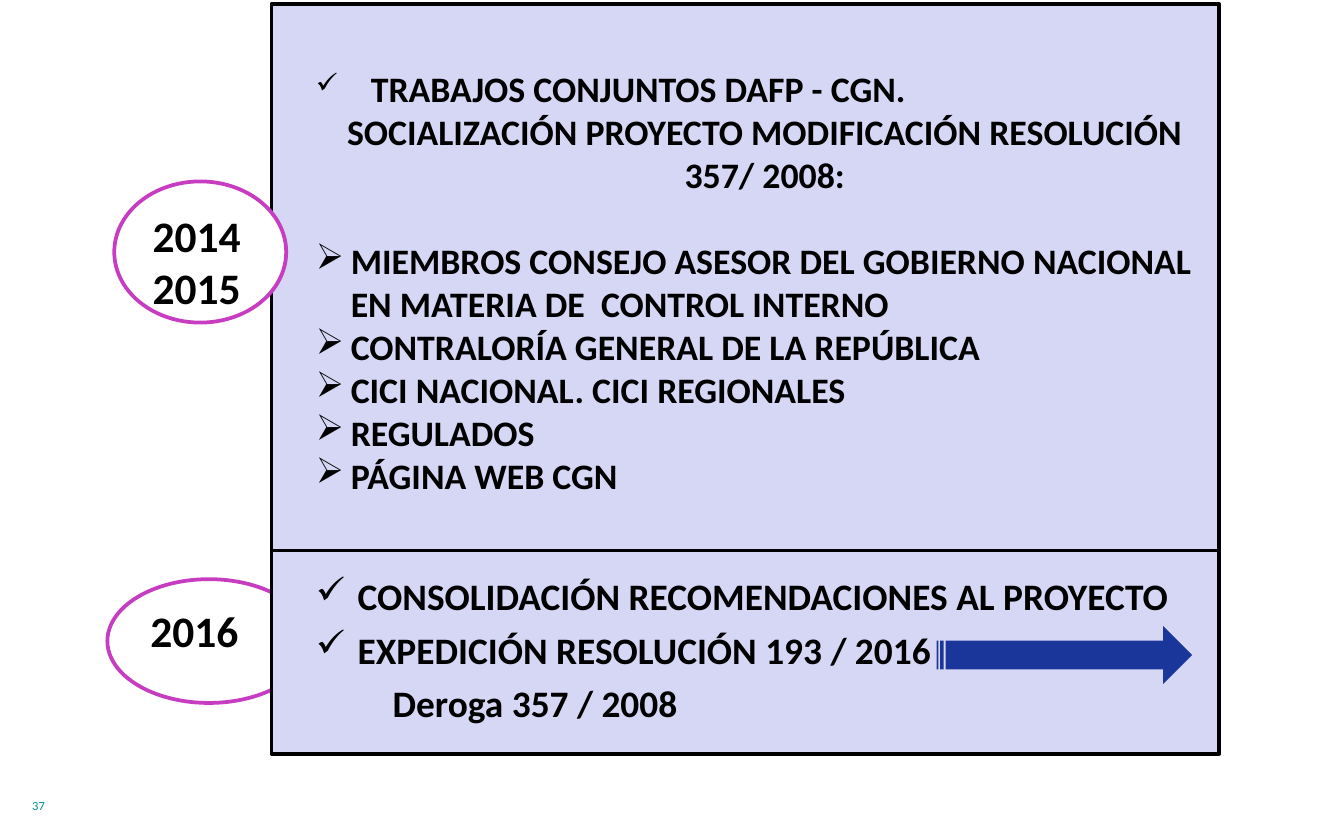
from dataclasses import dataclass

from lxml import etree
from pptx import Presentation
from pptx import util as u
from pptx.dml.color import RGBColor
from pptx.enum import shapes, text
from pptx.oxml.ns import qn

COLORS = {
    "panel": "D6D6F5",
    "ink": "000000",
    "white": "FFFFFF",
    "ring": "C73DC2",
    "arrow": "1B369A",
    "number": "00918E",
}
FONT = "Calibri"
CHECK, ARROWHEAD = "✓", "➢"


@dataclass
class Box:
    """Place and size in centimetres."""
    left: float
    top: float
    width: float
    height: float

    def lengths(self) -> list:
        return [u.Cm(v) for v in (self.left, self.top, self.width, self.height)]


@dataclass
class Line:
    """One paragraph: indents in centimetres, sizes and gaps in points."""
    words: str
    size: float
    bullet: str = ""
    margin: float = 0
    before: float = 0
    spacing: float = 1.0
    bullet_pct: int = 100
    align: text.PP_ALIGN = text.PP_ALIGN.LEFT
    bold: bool = True
    color: str = "ink"


@dataclass
class Block:
    kind: shapes.MSO_SHAPE
    box: Box
    fill: str
    outline: str
    lines: list
    frame: dict


def rgb(name: str) -> RGBColor:
    return RGBColor.from_string(COLORS[name])


def set_all(target, values: dict) -> None:
    for name, value in values.items():
        setattr(target, name, value)


def add_bullet(p, line: Line) -> None:
    p_pr = p._p.get_or_add_pPr()
    p_pr.set("marL", str(u.Cm(line.margin)))
    if line.bullet:
        p_pr.set("indent", str(-u.Cm(line.margin)))
        etree.SubElement(p_pr, qn("a:buSzPct"), val=str(line.bullet_pct * 1000))
        etree.SubElement(p_pr, qn("a:buChar"), char=line.bullet)


def write(tf, lines: list, frame: dict) -> None:
    set_all(tf, {"word_wrap": True, **frame})
    for i, line in enumerate(lines):
        p = tf.add_paragraph() if i else tf.paragraphs[0]
        add_bullet(p, line)
        set_all(p, {"alignment": line.align, "line_spacing": line.spacing,
                    "space_before": u.Pt(line.before)})
        r = p.add_run()
        r.text = line.words
        set_all(r.font, {"name": FONT, "size": u.Pt(line.size), "bold": line.bold})
        r.font.color.rgb = rgb(line.color)


def add_block(slide, block: Block) -> None:
    sp = slide.shapes.add_shape(block.kind, *block.box.lengths())
    sp.shadow.inherit = False
    sp.fill.solid()
    sp.fill.fore_color.rgb = rgb(block.fill)
    if block.outline:
        sp.line.color.rgb = rgb(block.outline)
        sp.line.width = u.Pt(2)
    else:
        sp.line.fill.background()
    if block.lines:
        write(sp.text_frame, block.lines, block.frame)


def panel(top: float, height: float, lines: list) -> Block:
    frame = {"vertical_anchor": text.MSO_ANCHOR.MIDDLE, "margin_left": u.Cm(0.84),
             **{f"margin_{side}": u.Cm(0.1) for side in ("top", "right", "bottom")}}
    return Block(shapes.MSO_SHAPE.RECTANGLE, Box(5.13, top, 17.91, height),
                 "panel", "ink", lines, frame)


def year_ring(box: Box, years: list) -> Block:
    return Block(shapes.MSO_SHAPE.OVAL, box, "white", "ring",
                 [Line(year, 23.3) for year in years],
                 {"vertical_anchor": text.MSO_ANCHOR.TOP})


def main() -> None:
    prs = Presentation()
    prs.slide_width, prs.slide_height = u.Cm(25.4), u.Cm(15.88)
    slide = prs.slides.add_slide(prs.slide_layouts[6])

    audiences = [
        "MIEMBROS CONSEJO ASESOR DEL GOBIERNO NACIONAL EN MATERIA DE  CONTROL INTERNO",
        "CONTRALORÍA GENERAL DE LA REPÚBLICA",
        "CICI NACIONAL. CICI REGIONALES",
        "REGULADOS",
        "PÁGINA WEB CGN",
    ]
    outreach = [
        Line("TRABAJOS CONJUNTOS DAFP - CGN.", 19.2, CHECK, 1.04, bullet_pct=78),
        Line("SOCIALIZACIÓN PROYECTO MODIFICACIÓN RESOLUCIÓN 357/ 2008:", 19.2,
             align=text.PP_ALIGN.CENTER),
        *(Line(words, 19.2, ARROWHEAD, 0.66, before=0 if i else 23.4)
          for i, words in enumerate(audiences)),
    ]
    resolution = [
        Line("CONSOLIDACIÓN RECOMENDACIONES AL PROYECTO", 20, CHECK, 0.79, spacing=0.9),
        Line("EXPEDICIÓN RESOLUCIÓN 193 / 2016", 20, CHECK, 0.79, 7, 0.9),
        Line("Deroga 357 / 2008", 20, "", 1.45, 7, 0.9),
    ]

    number = slide.shapes.add_textbox(*Box(0.36, 14.96, 5.28, 0.76).lengths())
    write(number.text_frame, [Line("37", 6.7, bold=False, color="number")], {})

    for block in (
        panel(0.08, 10.49, outreach),
        year_ring(Box(2.16, 3.43, 3.25, 2.67), ["2014", "2015"]),
        year_ring(Box(2.03, 10.95, 3.84, 2.34), ["2016"]),
        panel(10.41, 3.84, resolution),
        Block(shapes.MSO_SHAPE.STRIPED_RIGHT_ARROW, Box(17.7, 11.84, 4.83, 1.09),
              "arrow", "", [], {}),
    ):
        add_block(slide, block)

    prs.save("out.pptx")


if __name__ == "__main__":
    main()
